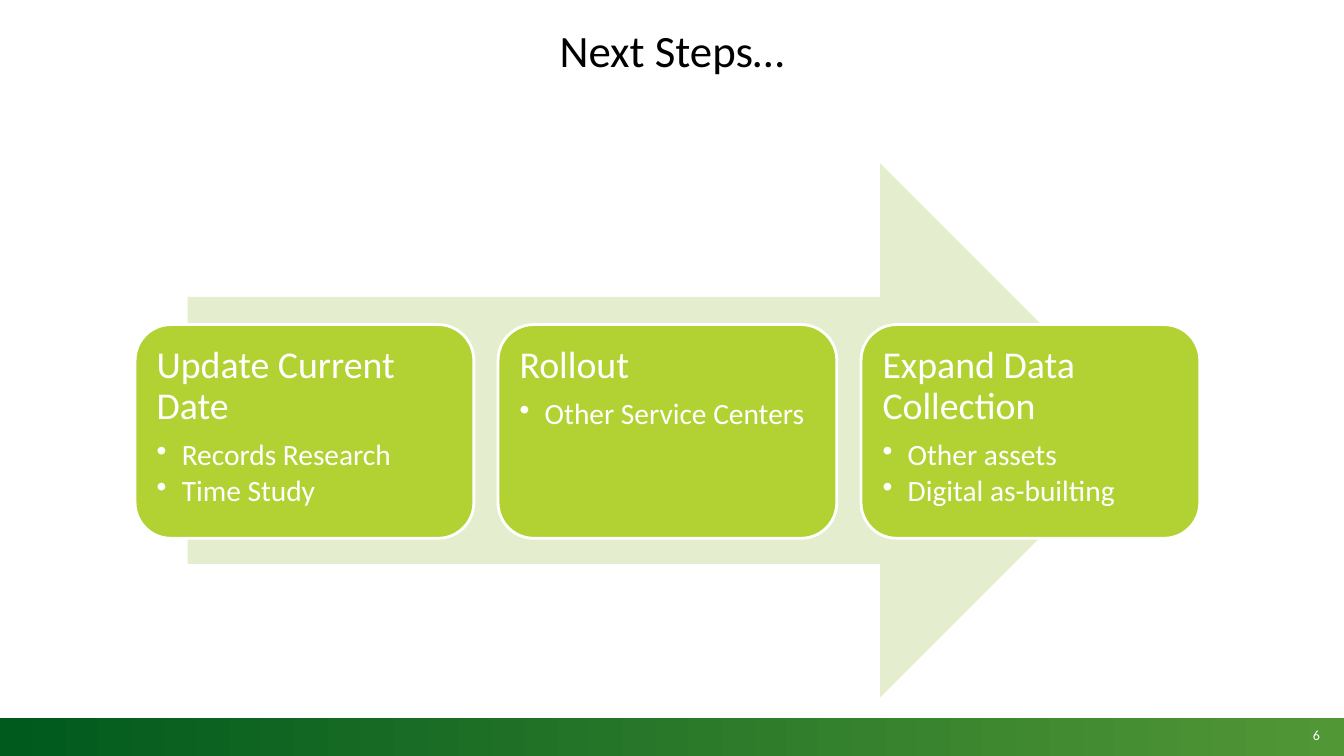
from lxml import etree
from pptx import Presentation
from pptx.dml.color import RGBColor
from pptx.enum.shapes import MSO_SHAPE
from pptx.enum.text import MSO_ANCHOR, PP_ALIGN
from pptx.oxml.ns import qn
from pptx.util import Pt

PX = 9144
RECT, ARROW, ROUND = MSO_SHAPE.RECTANGLE, MSO_SHAPE.RIGHT_ARROW, MSO_SHAPE.ROUNDED_RECTANGLE
TOP, MID = MSO_ANCHOR.TOP, MSO_ANCHOR.MIDDLE
LEFT, CENTER, RIGHT = PP_ALIGN.LEFT, PP_ALIGN.CENTER, PP_ALIGN.RIGHT
WHITE = RGBColor(0xFF, 0xFF, 0xFF)
BLACK = RGBColor(0x00, 0x00, 0x00)
DARK = RGBColor(0x00, 0x59, 0x1D)
GREEN = RGBColor(0x52, 0x97, 0x36)
PALE = RGBColor(0xE4, 0xEE, 0xCE)
LIME = RGBColor(0xB2, 0xD2, 0x34)

STEPS = [
    ("Update Current Date", ["Records Research", "Time Study"]),
    ("Rollout", ["Other Service Centers"]),
    ("Expand Data Collection", ["Other assets", "Digital as-builting"]),
]


def add_shape(kind, x, y, w, h, color=None):
    shape = slide.shapes.add_shape(kind, x * PX, y * PX, w * PX, h * PX)
    shape.shadow.inherit = False
    shape.line.fill.background()
    if color is not None:
        shape.fill.solid()
        shape.fill.fore_color.rgb = color
    return shape


def style(para, size, color, align):
    para.alignment = align
    for run in para.runs:
        run.font.name = "Calibri"
        run.font.size = Pt(size)
        run.font.color.rgb = color


deck = Presentation()
deck.slide_width, deck.slide_height = 1333 * PX, 750 * PX
slide = deck.slides.add_slide(deck.slide_layouts[5])

band = add_shape(RECT, 0, 712, 1333, 38)
band.fill.gradient()
band.fill.gradient_angle = 0
for stop, color in zip(band.fill.gradient_stops, (DARK, GREEN)):
    stop.color.rgb = color

page = slide.shapes.add_textbox(1273 * PX, 714 * PX, 46 * PX, 31 * PX).text_frame
page.word_wrap = True
page.vertical_anchor = MID
page.text = "6"
style(page.paragraphs[0], 10, WHITE, RIGHT)

title = slide.shapes.title
title.left, title.top, title.width, title.height = 48 * PX, 16 * PX, 1237 * PX, 66 * PX
frame = title.text_frame
frame.margin_left = frame.margin_right = frame.margin_top = frame.margin_bottom = 0
frame.vertical_anchor = MID
frame.text = "Next Steps…"
style(frame.paragraphs[0], 32, BLACK, CENTER)

add_shape(ARROW, 186, 162, 952, 530, PALE)

for i, (head, items) in enumerate(STEPS):
    card = add_shape(ROUND, 134 + 360 * i, 322, 336, 212, LIME)
    card.line.color.rgb = WHITE
    card.line.width = Pt(2)
    frame = card.text_frame
    frame.word_wrap = True
    frame.vertical_anchor = TOP
    frame.margin_left = frame.margin_right = frame.margin_top = frame.margin_bottom = 11 * PX
    frame.text = "\n".join([head] + items)
    for n, para in enumerate(frame.paragraphs):
        if n:
            props = para._p.get_or_add_pPr()
            props.set("marL", str(25 * PX))
            props.set("indent", str(-25 * PX))
            etree.SubElement(props, qn("a:buChar")).set("char", "•")
        para.line_spacing = 0.9
        para.space_after = Pt(3 if n else 9)
        style(para, 21 if n else 27, WHITE, LEFT)

deck.save("out.pptx")
